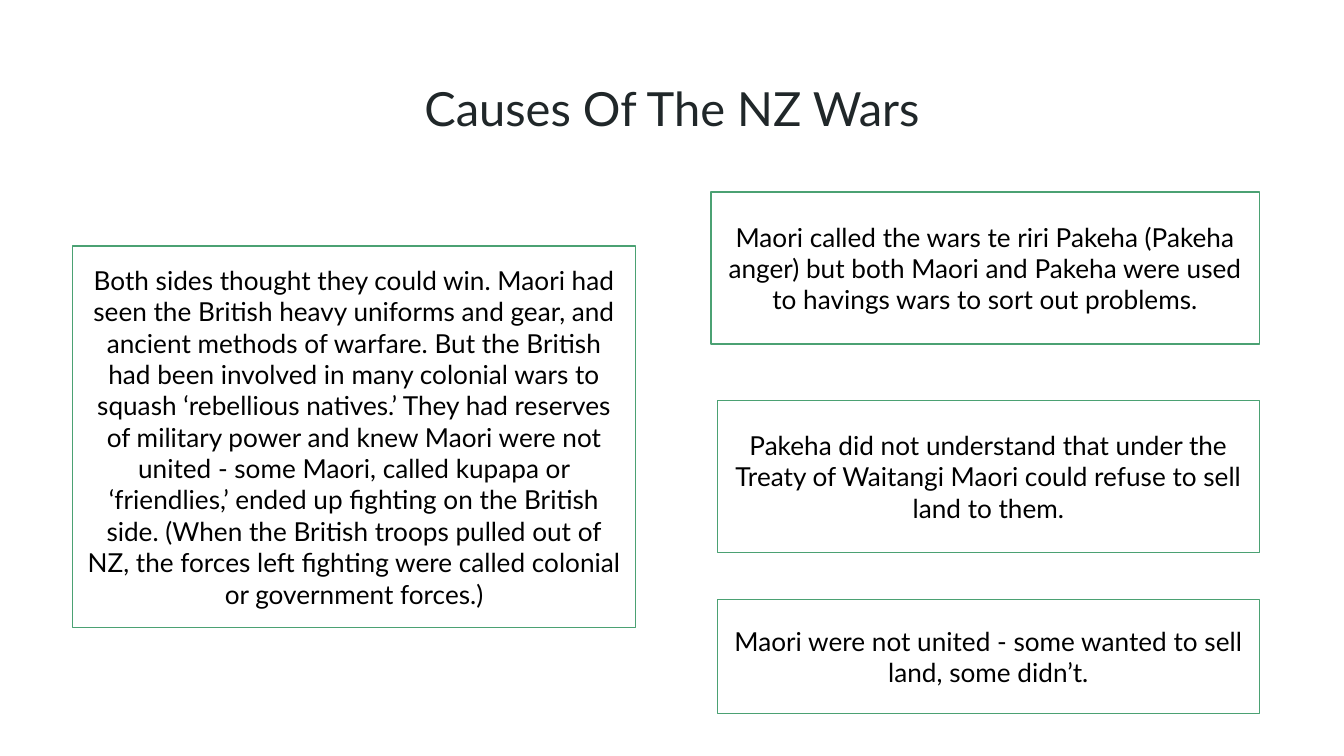
from pptx import Presentation, util as u
from pptx.dml.color import RGBColor
from pptx.enum import shapes, text

HUES = {"paper": "FFFFFF", "edge": "4BA173", "title": "202729", "body": "000000"}
FONT = "Lato"
TITLE = ("Causes Of The NZ Wars", (0.34, 0.49, 9.32, 0.63))
RIGHT = 9.37
CAUSES = [
    ("Both sides thought they could win. Maori had seen the British heavy uniforms "
     "and gear, and ancient methods of warfare. But the British had been involved in "
     "many colonial wars to squash ‘rebellious natives.’ They had reserves of military "
     "power and knew Maori were not united - some Maori, called kupapa or ‘friendlies,’ "
     "ended up fighting on the British side. (When the British troops pulled out of NZ, "
     "the forces left fighting were called colonial or government forces.)",
     (0.54, 1.83, 4.73, 2.84)),
    ("Maori called the wars te riri Pakeha (Pakeha anger) but both Maori and Pakeha "
     "were used to havings wars to sort out problems.", (5.29, 1.43, RIGHT, 1.13)),
    ("Pakeha did not understand that under the Treaty of Waitangi Maori could refuse "
     "to sell land to them.", (5.34, 2.98, RIGHT, 1.13)),
    ("Maori were not united - some wanted to sell land, some didn’t.",
     (5.34, 4.46, RIGHT, 0.85)),
]
MID, TOP = text.MSO_ANCHOR.MIDDLE, text.MSO_ANCHOR.TOP
FRAME = {"word_wrap": True, "auto_size": text.MSO_AUTO_SIZE.NONE}
FRAME |= {"margin_" + side: u.Inches(0.1) for side in ("left", "right", "top", "bottom")}


def hue(name):
    return RGBColor.from_string(HUES[name])


def write(shape, words, size, tone, anchor):
    frame = shape.text_frame
    for key, value in (FRAME | {"vertical_anchor": anchor}).items():
        setattr(frame, key, value)
    para = frame.paragraphs[0]
    para.alignment = text.PP_ALIGN.CENTER
    run = para.add_run()
    run.text = words
    for key, value in {"name": FONT, "size": u.Pt(size)}.items():
        setattr(run.font, key, value)
    run.font.color.rgb = hue(tone)


deck = Presentation()
deck.slide_width = u.Inches(10)
deck.slide_height = deck.slide_width * 9 // 16
slide = deck.slides.add_slide(deck.slide_layouts[6])
slide.background.fill.solid()
slide.background.fill.fore_color.rgb = hue("paper")

words, place = TITLE
write(slide.shapes.add_textbox(*map(u.Inches, place)), words, 25.2, "title", TOP)

for words, (left, top, right, height) in CAUSES:
    place = left, top, right - left, height
    box = slide.shapes.add_shape(shapes.MSO_SHAPE.RECTANGLE, *map(u.Inches, place))
    box.shadow.inherit = False
    box.fill.solid()
    box.fill.fore_color.rgb = hue("paper")
    box.line.color.rgb = hue("edge")
    box.line.width = u.Pt(0.75)
    write(box, words, 14, "body", MID)

deck.save("out.pptx")
